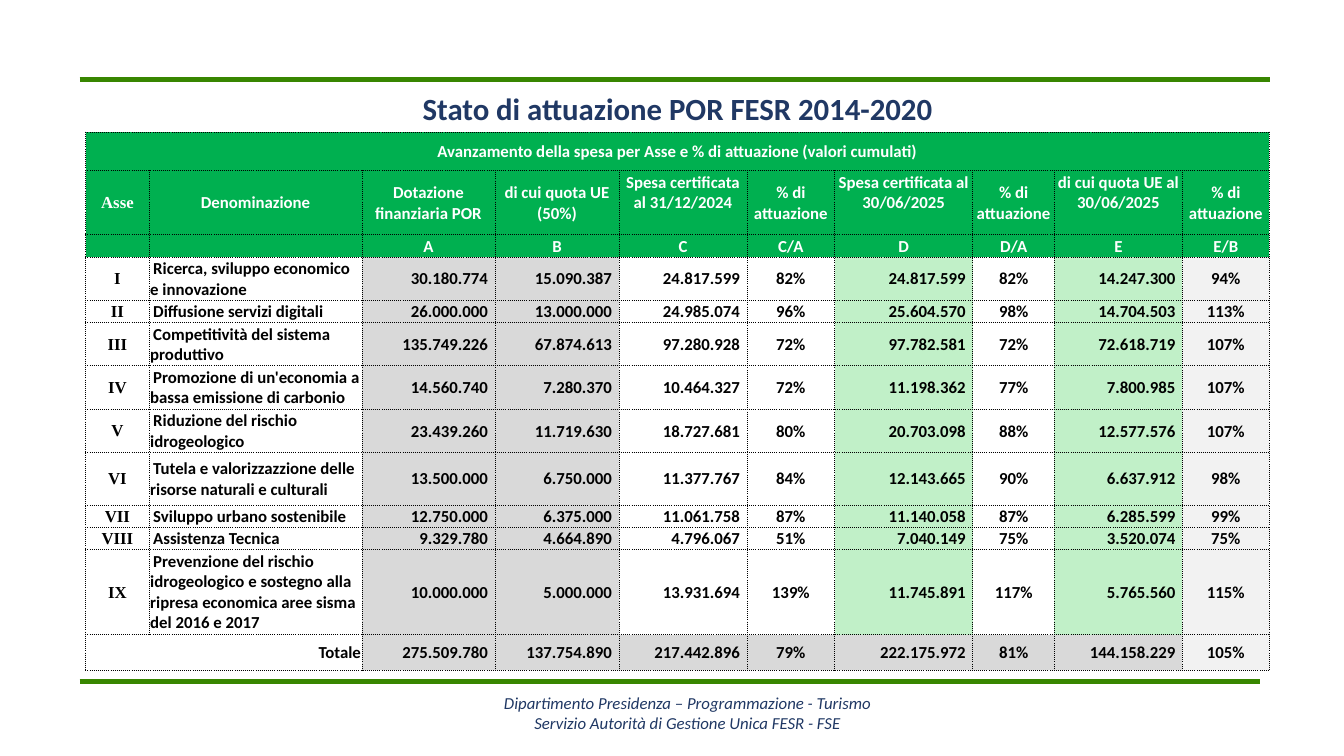
from lxml.etree import SubElement
from pptx import Presentation
from pptx.dml.color import RGBColor
from pptx.enum.shapes import MSO_CONNECTOR
from pptx.enum.text import MSO_ANCHOR, PP_ALIGN
from pptx.oxml.ns import qn
from pptx.util import Inches, Pt

GREEN, GREY, MINT, PALE = "00B050", "D9D9D9", "C1F0C8", "F2F2F2"
COLUMN_WIDTHS = [0.63, 2.11, 1.32, 1.23, 1.27, 0.87, 1.37, 0.81, 1.27, 0.86]
ROW_HEIGHTS = [0.38, 0.64, 0.22, 0.43, 0.22, 0.43, 0.43, 0.43, 0.52, 0.22, 0.22, 0.85, 0.35]
AXIS_FILLS = [None, None, GREY, GREY, "FFFFFF", None, MINT, None, MINT, PALE]
TOTAL_FILLS = [None, None] + [GREY] * 7 + [PALE]
AMOUNT_COLUMNS = {2, 3, 4, 6, 8}
RAISED_HEADINGS = {4, 6, 8}

TABLE_TITLE = "Avanzamento della spesa per Asse e % di attuazione (valori cumulati)"
HEADINGS = [
    "Asse", "Denominazione", "Dotazione finanziaria POR", "di cui quota UE (50%)",
    "Spesa certificata al 31/12/2024", "% di attuazione",
    "Spesa certificata al 30/06/2025", "% di attuazione",
    "di cui quota UE al 30/06/2025", "% di attuazione",
]
FORMULAS = ["", "", "A", "B", "C", "C/A", "D", "D/A", "E", "E/B"]
AXES = [
    ["I", "Ricerca, sviluppo economico e innovazione", "30.180.774", "15.090.387",
     "24.817.599", "82%", "24.817.599", "82%", "14.247.300", "94%"],
    ["II", "Diffusione servizi digitali", "26.000.000", "13.000.000",
     "24.985.074", "96%", "25.604.570", "98%", "14.704.503", "113%"],
    ["III", "Competitività del sistema produttivo", "135.749.226", "67.874.613",
     "97.280.928", "72%", "97.782.581", "72%", "72.618.719", "107%"],
    ["IV", "Promozione di un'economia a bassa emissione di carbonio", "14.560.740", "7.280.370",
     "10.464.327", "72%", "11.198.362", "77%", "7.800.985", "107%"],
    ["V", "Riduzione del rischio idrogeologico", "23.439.260", "11.719.630",
     "18.727.681", "80%", "20.703.098", "88%", "12.577.576", "107%"],
    ["VI", "Tutela e valorizzazzione delle risorse naturali e culturali", "13.500.000", "6.750.000",
     "11.377.767", "84%", "12.143.665", "90%", "6.637.912", "98%"],
    ["VII", "Sviluppo urbano sostenibile", "12.750.000", "6.375.000",
     "11.061.758", "87%", "11.140.058", "87%", "6.285.599", "99%"],
    ["VIII", "Assistenza Tecnica", "9.329.780", "4.664.890",
     "4.796.067", "51%", "7.040.149", "75%", "3.520.074", "75%"],
    ["IX", "Prevenzione del rischio idrogeologico e sostegno alla ripresa economica aree sisma "
     "del 2016 e 2017", "10.000.000", "5.000.000",
     "13.931.694", "139%", "11.745.891", "117%", "5.765.560", "115%"],
]
TOTALS = ["Totale", "", "275.509.780", "137.754.890", "217.442.896", "79%",
          "222.175.972", "81%", "144.158.229", "105%"]


def rgb(value):
    return RGBColor.from_string(value)


class SlideBuilder:
    FONT, NUMERAL_FONT = "Calibri", "Times New Roman"
    NAVY, RULE_GREEN = "203864", "388600"

    def __init__(self, page):
        self.page = page

    def style(self, para, size, color, align, name=FONT, bold=False, italic=False):
        para.alignment = align
        font = para.font
        font.name, font.size, font.bold, font.italic = name, Pt(size), bold, italic
        font.color.rgb = rgb(color)

    def rule(self, left, right, top):
        line = self.page.shapes.add_connector(
            MSO_CONNECTOR.STRAIGHT, Inches(left), Inches(top), Inches(right), Inches(top))
        line.line.color.rgb = rgb(self.RULE_GREEN)
        line.line.width = Pt(3.25)
        SubElement(line._element.spPr, qn("a:effectLst"))

    def text(self, lines, left, top, width, height, size, inset=0.05, **emphasis):
        box = self.page.shapes.add_textbox(
            Inches(left), Inches(top), Inches(width), Inches(height))
        frame = box.text_frame
        frame.word_wrap = True
        frame.margin_top = frame.margin_bottom = Inches(inset)
        frame.text = "\n".join(lines)
        for para in frame.paragraphs:
            self.style(para, size, self.NAVY, PP_ALIGN.CENTER, **emphasis)

    def table(self, left, top, widths, heights):
        frame = self.page.shapes.add_table(
            len(heights), len(widths), Inches(left), Inches(top),
            Inches(sum(widths)), Inches(sum(heights)))
        table = frame.table
        table.first_row = table.horz_banding = False
        for column, width in zip(table.columns, widths):
            column.width = Inches(width)
        for row, height in zip(table.rows, heights):
            row.height = Inches(height)
        return table

    def dotted_borders(self, cell):
        properties = cell._tc.get_or_add_tcPr()
        for side in ("lnL", "lnR", "lnT", "lnB"):
            border = SubElement(properties, qn(f"a:{side}"), w=str(Pt(0.5)))
            SubElement(SubElement(border, qn("a:solidFill")), qn("a:srgbClr"), val="000000")
            SubElement(border, qn("a:prstDash"), val="sysDot")

    def cell(self, cell, text, fill, color="000000", align=PP_ALIGN.CENTER,
             name=FONT, right=0.01, bottom=0, indent=0):
        cell.vertical_anchor = MSO_ANCHOR.MIDDLE
        cell.margin_left = cell.margin_top = Inches(0.01)
        cell.margin_right, cell.margin_bottom = Inches(right), Inches(bottom)
        self.dotted_borders(cell)
        if fill:
            cell.fill.solid()
            cell.fill.fore_color.rgb = rgb(fill)
        else:
            cell.fill.background()
        cell.text = text
        para = cell.text_frame.paragraphs[0]
        self.style(para, 12, color, align, name, bold=True)
        if indent:
            para._p.get_or_add_pPr().set("indent", str(Inches(indent)))
        if not text:
            SubElement(para._p, qn("a:endParaRPr"), sz="1200")


def fill_progress_table(builder, table):
    last = len(ROW_HEIGHTS) - 1
    table.cell(0, 0).merge(table.cell(0, len(COLUMN_WIDTHS) - 1))
    table.cell(last, 0).merge(table.cell(last, 1))

    title_row = [TABLE_TITLE] + [""] * (len(COLUMN_WIDTHS) - 1)
    for row, texts in enumerate([title_row, HEADINGS, FORMULAS]):
        for column, text in enumerate(texts):
            builder.cell(
                table.cell(row, column), text, GREEN, "FFFFFF",
                name=builder.NUMERAL_FONT if text == "Asse" else builder.FONT,
                bottom=0.2 if row == 1 and column in RAISED_HEADINGS else 0)

    for row, texts in enumerate(AXES + [TOTALS], start=3):
        fills = TOTAL_FILLS if row == last else AXIS_FILLS
        for column, text in enumerate(texts):
            options = {}
            if column in AMOUNT_COLUMNS:
                options = {"align": PP_ALIGN.RIGHT, "right": 0.07}
            elif row == last and column == 0:
                options = {"align": PP_ALIGN.RIGHT}
            elif column == 0:
                options = {"name": builder.NUMERAL_FONT}
            elif column == 1:
                options = {"align": PP_ALIGN.LEFT, "indent": 0.03}
            builder.cell(table.cell(row, column), text, fills[column], **options)


def main():
    deck = Presentation()
    deck.slide_width, deck.slide_height = Inches(13.33), Inches(7.5)
    builder = SlideBuilder(deck.slides.add_slide(deck.slide_layouts[6]))
    builder.rule(0.79, 12.6, 0.79)
    builder.rule(0.79, 12.5, 6.76)
    builder.text(["Dipartimento Presidenza – Programmazione - Turismo",
                  "Servizio Autorità di Gestione Unica FESR - FSE"],
                 0.52, 6.87, 12.6, 0.57, 12, inset=0, italic=True)
    builder.text(["Stato di attuazione POR FESR 2014-2020"],
                 0.85, 0.84, 11.74, 0.47, 22, bold=True)
    fill_progress_table(builder, builder.table(0.85, 1.31, COLUMN_WIDTHS, ROW_HEIGHTS))
    deck.save("out.pptx")


if __name__ == "__main__":
    main()
